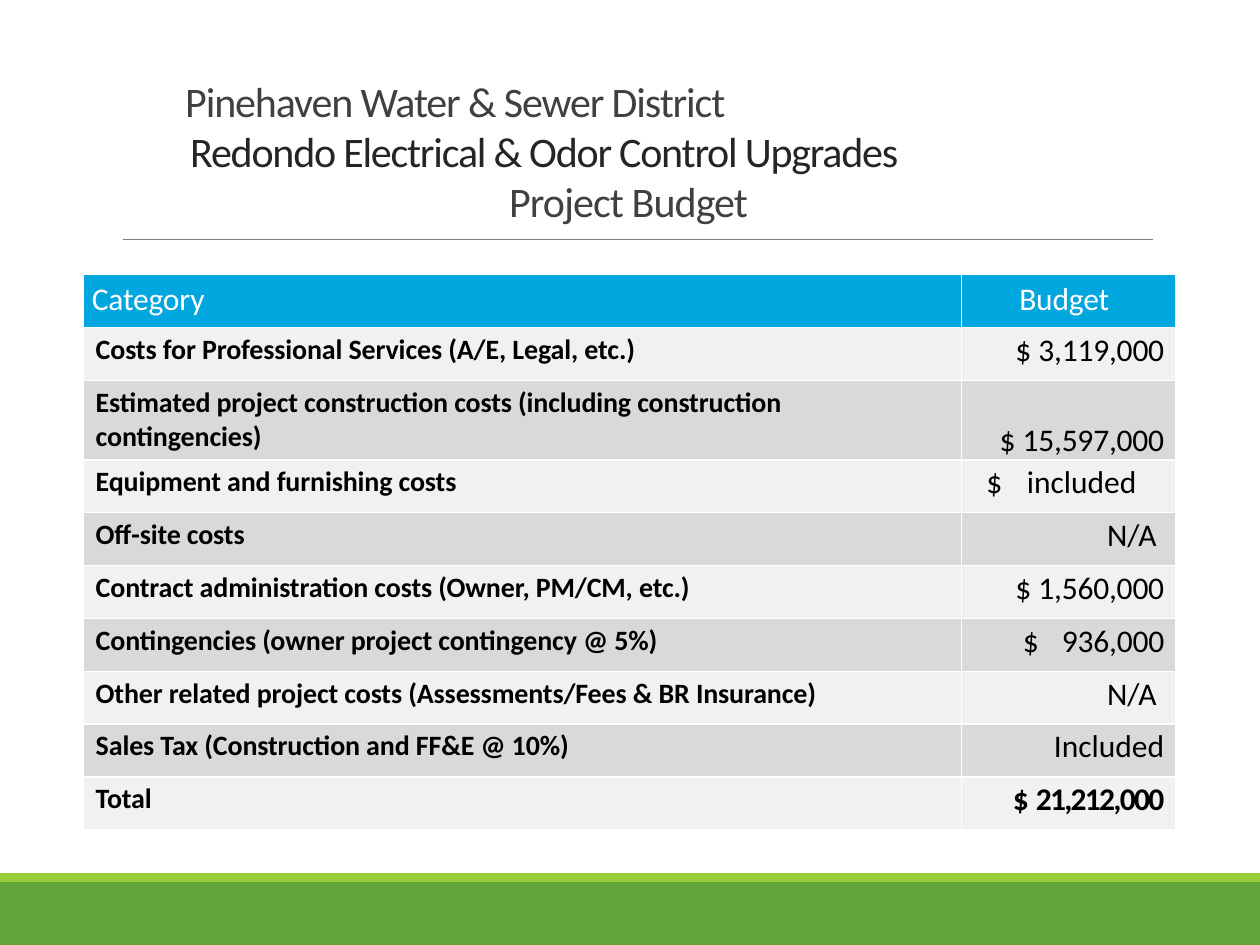
from dataclasses import dataclass
from typing import Any

from lxml import etree
from pptx import Presentation
from pptx.dml.color import RGBColor
from pptx.enum.shapes import MSO_CONNECTOR, MSO_SHAPE
from pptx.enum.text import MSO_ANCHOR, MSO_AUTO_SIZE, PP_ALIGN
from pptx.oxml.ns import qn
from pptx.util import Inches, Pt

LEFT, RIGHT = PP_ALIGN.LEFT, PP_ALIGN.RIGHT
TOP, BOTTOM = MSO_ANCHOR.TOP, MSO_ANCHOR.BOTTOM
RECTANGLE, STRAIGHT = MSO_SHAPE.RECTANGLE, MSO_CONNECTOR.STRAIGHT
NO_AUTOFIT = MSO_AUTO_SIZE.NONE

WHITE = RGBColor(0xFF, 0xFF, 0xFF)
BLACK = RGBColor(0x00, 0x00, 0x00)
TITLE_GRAY = RGBColor(0x40, 0x40, 0x40)
TITLE_DARK = RGBColor(0x25, 0x25, 0x25)
RULE_GRAY = RGBColor(0x7E, 0x7E, 0x7E)
GREEN = RGBColor(0x62, 0xA4, 0x37)
LIME = RGBColor(0x99, 0xCA, 0x38)
HEADER_BLUE = RGBColor(0x00, 0xA6, 0xDE)
BAND_LIGHT = RGBColor(0xF1, 0xF1, 0xF1)
BAND_DARK = RGBColor(0xD9, 0xD9, 0xD9)

# Title lines: text, left indent, colour, letter spacing
TITLE_LINES = [
    ("Pinehaven Water & Sewer District", 0.47, TITLE_GRAY, -0.65),
    ("Redondo Electrical & Odor Control Upgrades", 0.51, TITLE_DARK, -0.7),
    ("Project Budget", 3.04, TITLE_GRAY, -0.55),
]

# Budget lines: category, amount as (text, letter spacing) runs
BUDGET = [
    ("Costs for Professional Services (A/E, Legal, etc.)", [("$ ", 0), ("3,119,000", -0.1)]),
    ("Estimated project construction costs (including construction contingencies)",
     [("$ ", 0), ("15,597,000", -0.1)]),
    ("Equipment and furnishing costs", [("$", 0), (" ", 10), ("included", 0)]),
    ("Off-site costs", [("N/A", 0)]),
    ("Contract administration costs (Owner, PM/CM, etc.)", [("$ ", 0), ("1,560,000", -0.1)]),
    ("Contingencies (owner project contingency @ 5%)",
     [("$", 0), (" ", 9), ("936,000", -0.1)]),
    ("Other related project costs (Assessments/Fees & BR Insurance)", [("N/A", 0)]),
    ("Sales Tax (Construction and FF&E @ 10%)", [("Included", 0)]),
    ("Total", [("$ ", 0), ("21,212,000", -1)]),
]
COLUMN_WIDTHS = [6.97, 1.7]
ROW_HEIGHT, TALL_ROW_HEIGHT = 0.42, 0.63
TALL_ROW, TOTAL_ROW = 2, 9
# Right margins of amounts that stand further in
AMOUNT_MARGINS = {3: 0.31, 4: 0.15, 7: 0.15}


def apply(target, values):
    for name, value in values.items():
        setattr(target, name, value)


@dataclass
class SlideBuilder:
    slide: Any
    font: str = "Calibri"

    def add_runs(self, paragraph, runs, size, color, bold=False):
        for text, spacing in runs:
            run = paragraph.add_run()
            run.text = text
            apply(run.font, {"name": self.font, "size": Pt(size), "bold": bold})
            run.font.color.rgb = color
            run.font._element.set("spc", str(round(spacing * 100)))

    def title(self, lines, left, top, width, height):
        title = self.slide.shapes.title
        apply(title, {"left": Inches(left), "top": Inches(top),
                      "width": Inches(width), "height": Inches(height)})
        frame = title.text_frame
        apply(frame, {"margin_left": 0, "margin_right": 0, "margin_top": 0,
                      "margin_bottom": 0, "word_wrap": True,
                      "auto_size": NO_AUTOFIT, "vertical_anchor": BOTTOM})
        for index, (text, indent, color, spacing) in enumerate(lines):
            paragraph = frame.add_paragraph() if index else frame.paragraphs[0]
            apply(paragraph, {"alignment": LEFT, "line_spacing": Pt(28.6),
                              "space_before": Pt(0)})
            paragraph._p.get_or_add_pPr().set("marL", str(Inches(indent)))
            self.add_runs(paragraph, [(text, spacing)], 24, color)

    def band(self, top, height, color):
        band = self.slide.shapes.add_shape(
            RECTANGLE, 0, Inches(top), Inches(10), Inches(height))
        band.shadow.inherit = False
        band.fill.solid()
        band.fill.fore_color.rgb = color
        band.line.fill.background()

    def rule(self, left, right, y):
        rule = self.slide.shapes.add_connector(
            STRAIGHT, Inches(left), Inches(y), Inches(right), Inches(y))
        rule.line.color.rgb = RULE_GRAY
        rule.line.width = Pt(0.48)
        etree.SubElement(rule._element.spPr, qn("a:effectLst"))

    def table(self, left, top, widths, heights):
        table = self.slide.shapes.add_table(
            len(heights), len(widths), Inches(left), Inches(top),
            Inches(sum(widths)), Inches(sum(heights))).table
        for column, width in zip(table.columns, widths):
            column.width = Inches(width)
        for row, height in zip(table.rows, heights):
            row.height = Inches(height)
        return table

    def cell(self, cell, runs, fill, size, color=BLACK, bold=False, align=LEFT,
             anchor=TOP, left=0, right=0, top=0.04, before=2.6):
        apply(cell, {"margin_left": Inches(left), "margin_right": Inches(right),
                     "margin_top": Inches(top), "margin_bottom": 0,
                     "vertical_anchor": anchor})
        paragraph = cell.text_frame.paragraphs[0]
        apply(paragraph, {"alignment": align, "space_before": Pt(before)})
        self.add_runs(paragraph, runs, size, color, bold)
        self.borders(cell)
        cell.fill.solid()
        cell.fill.fore_color.rgb = fill

    def borders(self, cell):
        properties = cell._tc.get_or_add_tcPr()
        for side in ("lnL", "lnR", "lnT", "lnB"):
            line = etree.SubElement(properties, qn(f"a:{side}"), w=str(Pt(1)))
            fill = etree.SubElement(line, qn("a:solidFill"))
            etree.SubElement(fill, qn("a:srgbClr"), val=str(WHITE))


def main():
    presentation = Presentation()
    presentation.slide_width = Inches(10)
    presentation.slide_height = Inches(7.5)
    builder = SlideBuilder(presentation.slides.add_slide(presentation.slide_layouts[5]))

    # Footer bands and title rule
    builder.band(7, 0.5, GREEN)
    builder.band(6.93, 0.07, LIME)
    builder.rule(0.98, 9.15, 1.9)

    # Title
    builder.title(TITLE_LINES, 1, 0.5, 7.99, 1.29)

    # Budget table
    heights = [TALL_ROW_HEIGHT if row == TALL_ROW else ROW_HEIGHT
               for row in range(len(BUDGET) + 1)]
    budget = builder.table(0.66, 2.18, COLUMN_WIDTHS, heights)
    header = {"fill": HEADER_BLUE, "size": 18, "color": WHITE, "top": 0.05, "before": 3.5}
    builder.cell(budget.cell(0, 0), [("Category", -0.1)], left=0.07, **header)
    builder.cell(budget.cell(0, 1), [("Budget", -0.1)], left=0.46, **header)
    for row, (category, amount) in enumerate(BUDGET, start=1):
        fill = BAND_LIGHT if row % 2 else BAND_DARK
        builder.cell(budget.cell(row, 0), [(category, -0.05)], fill, 16, bold=True,
                     left=0.1, right=1 if row == TALL_ROW else 0)
        builder.cell(budget.cell(row, 1), amount, fill, 18, bold=row == TOTAL_ROW,
                     align=RIGHT, anchor=BOTTOM if row == TALL_ROW else TOP,
                     right=AMOUNT_MARGINS.get(row, 0.09), top=0.03, before=2.4)

    presentation.save("out.pptx")


if __name__ == "__main__":
    main()
